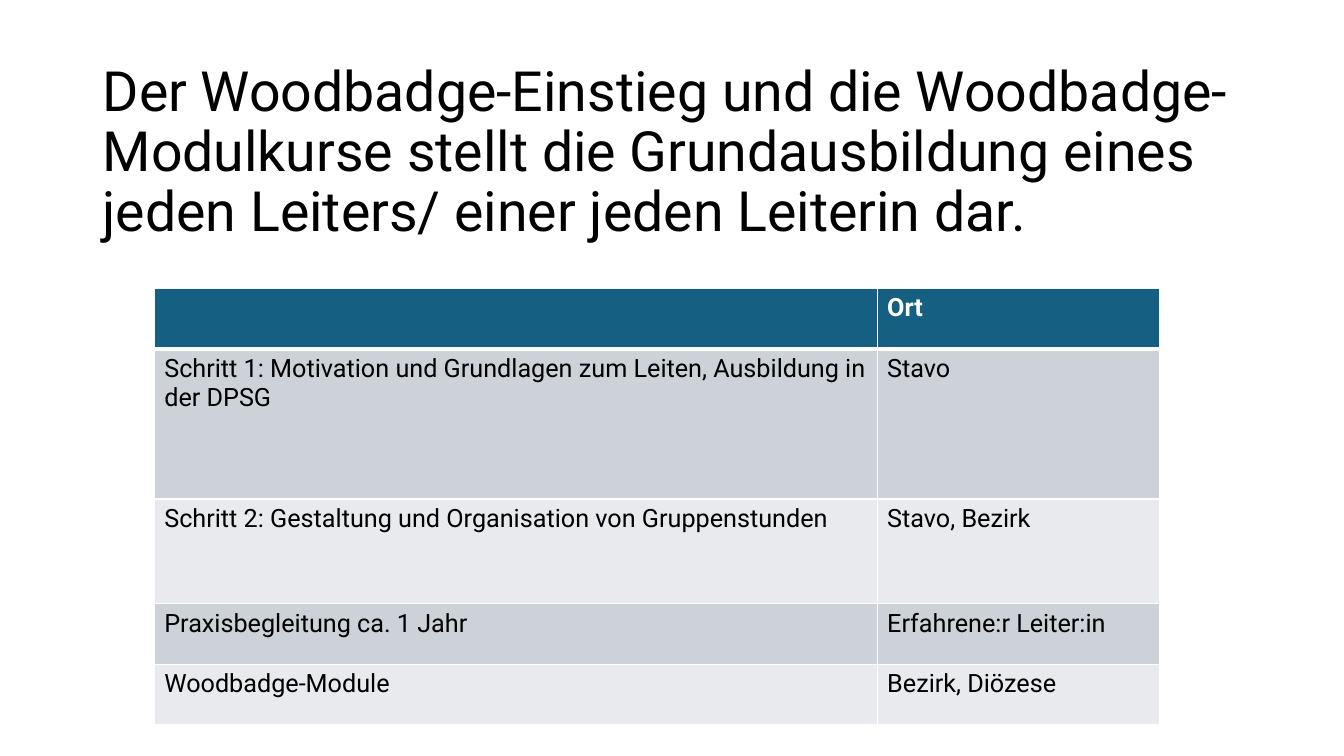
import pptx
import pptx.dml.color
import pptx.enum.text
import pptx.oxml.ns
import pptx.util
from dataclasses import dataclass
from lxml import etree

Inches, Pt = pptx.util.Inches, pptx.util.Pt
qn = pptx.oxml.ns.qn


@dataclass(frozen=True)
class Theme:
    font: str = "Roboto"
    ink: str = "000000"
    paper: str = "FFFFFF"
    head: str = "156082"
    bands: tuple = ("CCD2D8", "E8EAED")
    title: float = 39.6
    body: float = 18
    thin: float = 1
    thick: float = 3


theme = Theme()

TITLE = ("Der Woodbadge-Einstieg und die Woodbadge-Modulkurse stellt die "
         "Grundausbildung eines jeden Leiters/ einer jeden Leiterin dar.")
STEPS = [
    ("", "Ort"),
    ("Schritt 1: Motivation und Grundlagen zum Leiten, Ausbildung in der DPSG",
     "Stavo"),
    ("Schritt 2: Gestaltung und Organisation von Gruppenstunden",
     "Stavo, Bezirk"),
    ("Praxisbegleitung ca. 1 Jahr", "Erfahrene:r Leiter:in"),
    ("Woodbadge-Module", "Bezirk, Diözese"),
]
WIDTHS = (7.17, 2.8)
HEIGHTS = (0.6, 1.49, 1.04, 0.6, 0.6)


def color(code):
    return pptx.dml.color.RGBColor.from_string(code)


def style(para, size, code, bold=False):
    font = para.font
    font.name, font.size, font.bold = theme.font, Pt(size), bold
    font.color.rgb = color(code)


def border(cell, top, base):
    """Give a cell its four edges; they must precede its fill in the XML."""
    props = cell._tc.get_or_add_tcPr()
    edges = (("L", theme.thin), ("R", theme.thin), ("T", top), ("B", base))
    for spot, (side, width) in enumerate(edges):
        line = etree.Element(qn("a:ln" + side), w=str(Pt(width)))
        fill = etree.SubElement(line, qn("a:solidFill"))
        etree.SubElement(fill, qn("a:srgbClr"), val=theme.paper)
        props.insert(spot, line)


def add_title(slide, left, top, width, height):
    box = slide.shapes.add_textbox(
        Inches(left), Inches(top), Inches(width), Inches(height))
    frame = box.text_frame
    frame.word_wrap = True
    frame.vertical_anchor = pptx.enum.text.MSO_ANCHOR.MIDDLE
    para = frame.paragraphs[0]
    para.text = TITLE
    para.line_spacing = 0.9
    style(para, theme.title, theme.ink)


def add_steps(slide, left, top):
    table = slide.shapes.add_table(
        len(STEPS), len(WIDTHS), Inches(left), Inches(top),
        Inches(sum(WIDTHS)), Inches(sum(HEIGHTS))).table
    for column, width in zip(table.columns, WIDTHS):
        column.width = Inches(width)
    for row, height in zip(table.rows, HEIGHTS):
        row.height = Inches(height)

    # Header row, then alternating bands
    for r, texts in enumerate(STEPS):
        head = r == 0
        for c, text in enumerate(texts):
            cell = table.cell(r, c)
            cell.text = text
            style(cell.text_frame.paragraphs[0], theme.body,
                  theme.paper if head else theme.ink, head)
            cell.fill.solid()
            cell.fill.fore_color.rgb = color(
                theme.head if head else theme.bands[(r - 1) % 2])
            border(cell, theme.thick if r == 1 else theme.thin,
                   theme.thick if head else theme.thin)


def main():
    deck = pptx.Presentation()
    deck.slide_width, deck.slide_height = Inches(13.33), Inches(7.5)
    slide = deck.slides.add_slide(deck.slide_layouts[6])
    add_title(slide, 0.92, 0.4, 11.5, 2.24)
    add_steps(slide, 1.53, 2.86)
    deck.save("out.pptx")


if __name__ == "__main__":
    main()
